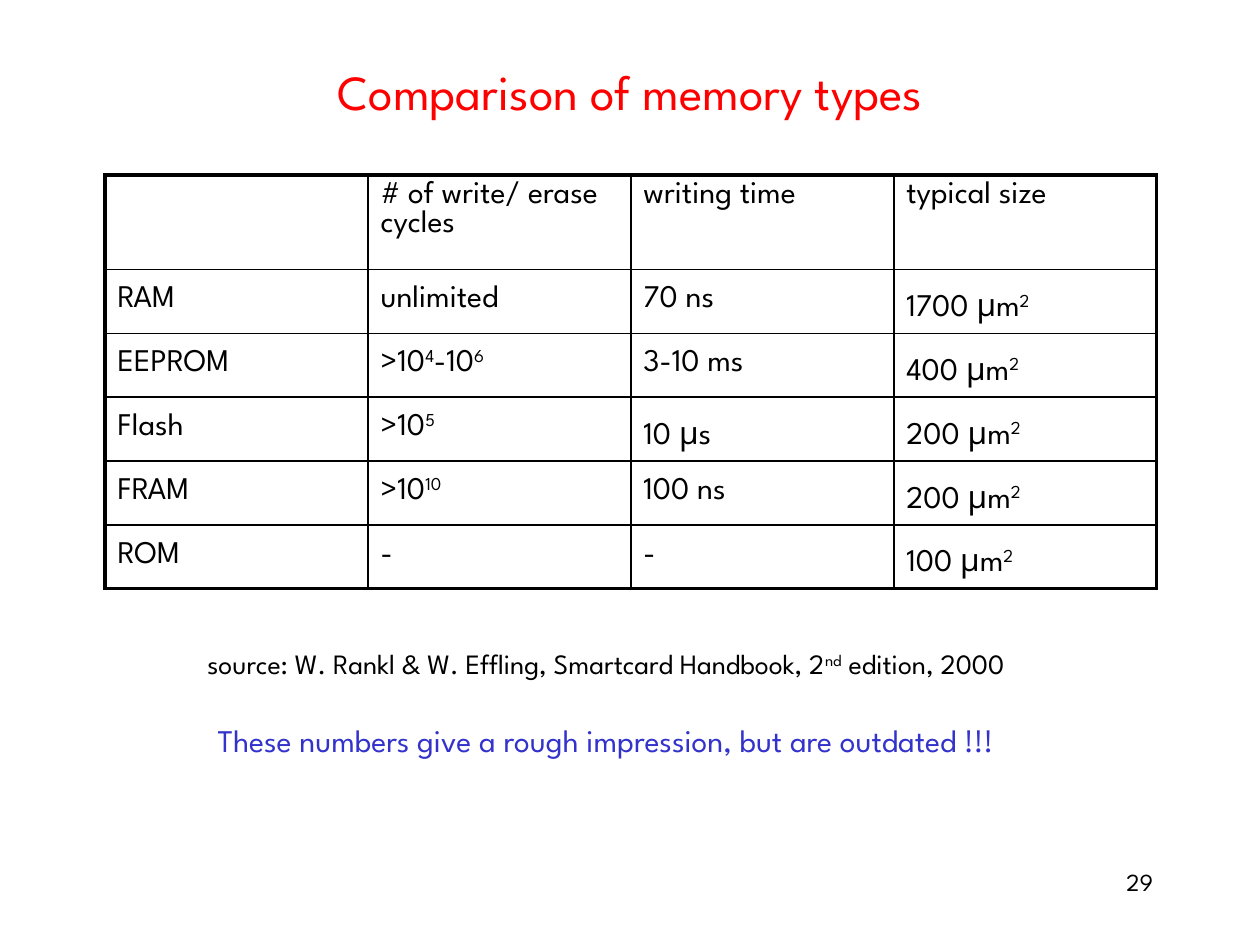
from dataclasses import dataclass
from itertools import groupby

from lxml.etree import SubElement
from pptx import Presentation
from pptx.dml.color import RGBColor
from pptx.enum.text import MSO_ANCHOR, PP_ALIGN
from pptx.oxml.ns import qn
from pptx.util import Pt


@dataclass(frozen=True)
class Theme:
    font: str = "League Spartan"
    greek: str = "Comic Neue"
    black: str = "000000"
    red: str = "FF0000"
    blue: str = "3333CC"
    title: float = 28
    body: float = 18
    source: float = 16
    number: float = 14
    thin: float = 1
    thick: float = 2.25


@dataclass(frozen=True)
class Box:
    left: float
    top: float
    width: float
    height: float

    def place(self) -> tuple:
        return Pt(self.left), Pt(self.top), Pt(self.width), Pt(self.height)


@dataclass(frozen=True)
class Memory:
    name: str
    cycles: str
    time: str
    size: str

    def cells(self) -> tuple:
        return self.name, self.cycles, self.time, self.size


THEME = Theme()
HEADER = Memory("", "# of write/ erase cycles", "writing time", "typical size")
TYPES = [
    Memory("RAM", "unlimited", "70 ns", "1700 μm^2^"),
    Memory("EEPROM", ">10^4^-10^6^", "3-10 ms", "400 μm^2^"),
    Memory("Flash", ">10^5^", "10 μs", "200 μm^2^"),
    Memory("FRAM", ">10^10^", "100 ns", "200 μm^2^"),
    Memory("ROM", "-", "-", "100 μm^2^"),
]


def write(para, text: str, *, size: float = THEME.body, color: str = THEME.black,
          align=PP_ALIGN.LEFT, before: float = 0, spacing: float = 1) -> None:
    para.alignment = align
    para.space_before = Pt(before)
    para.line_spacing = spacing
    for index, part in enumerate(text.split("^")):
        for greek, chars in groupby(part, lambda char: char == "μ"):
            run = para.add_run()
            run.text = "".join(chars)
            font = run.font
            font.name = THEME.greek if greek else THEME.font
            font.size = Pt(size)
            font.color.rgb = RGBColor.from_string(color)
            if index % 2:
                font._element.set("baseline", "30000")


def add_box(slide, box: Box, anchor=MSO_ANCHOR.TOP):
    frame = slide.shapes.add_textbox(*box.place()).text_frame
    frame.word_wrap = True
    frame.vertical_anchor = anchor
    return frame


def add_edges(cell, thick: dict[str, bool]) -> None:
    props = cell._tc.get_or_add_tcPr()
    for side, heavy in thick.items():
        width = THEME.thick if heavy else THEME.thin
        line = SubElement(props, qn(f"a:ln{side}"), w=str(Pt(width)))
        fill = SubElement(line, qn("a:solidFill"))
        SubElement(fill, qn("a:srgbClr"), val=THEME.black)
    SubElement(props, qn("a:noFill"))


def add_grid(slide, box: Box, rows: list[Memory], heights: list[float]) -> None:
    count = len(HEADER.cells())
    table = slide.shapes.add_table(len(rows), count, *box.place()).table
    table.first_row = table.horz_banding = False
    for column in table.columns:
        column.width = Pt(box.width / count)
    for y, (row, height) in enumerate(zip(rows, heights)):
        table.rows[y].height = Pt(height)
        for x, text in enumerate(row.cells()):
            cell = table.cell(y, x)
            write(cell.text_frame.paragraphs[0], text, before=6,
                  spacing=1.34 if y else 1)
            add_edges(cell, {"L": x == 0, "R": x == count - 1,
                             "T": y == 0, "B": y == len(rows) - 1})


def main() -> None:
    deck = Presentation()
    deck.slide_width, deck.slide_height = Pt(720), Pt(540)
    slide = deck.slides.add_slide(deck.slide_layouts[6])

    title = add_box(slide, Box(54, 21.6, 612, 60.5), MSO_ANCHOR.MIDDLE)
    write(title.paragraphs[0], "Comparison of memory types",
          size=THEME.title, color=THEME.red, align=PP_ALIGN.CENTER)

    number = add_box(slide, Box(516, 492, 150, 36))
    write(number.paragraphs[0], "29", size=THEME.number, align=PP_ALIGN.RIGHT)

    add_grid(slide, Box(60, 100, 601, 236.5), [HEADER, *TYPES],
             [54] + [36.5] * len(TYPES))

    notes = add_box(slide, Box(54, 366, 584.5, 67.5))
    write(notes.paragraphs[0],
          "source: W. Rankl & W. Effling, Smartcard Handbook, 2^nd^ edition, 2000",
          size=THEME.source, align=PP_ALIGN.CENTER, before=4)
    write(notes.add_paragraph(),
          "These numbers give a rough impression, but are outdated !!!",
          color=THEME.blue, align=PP_ALIGN.CENTER, before=23.5)

    deck.save("out.pptx")


if __name__ == "__main__":
    main()
